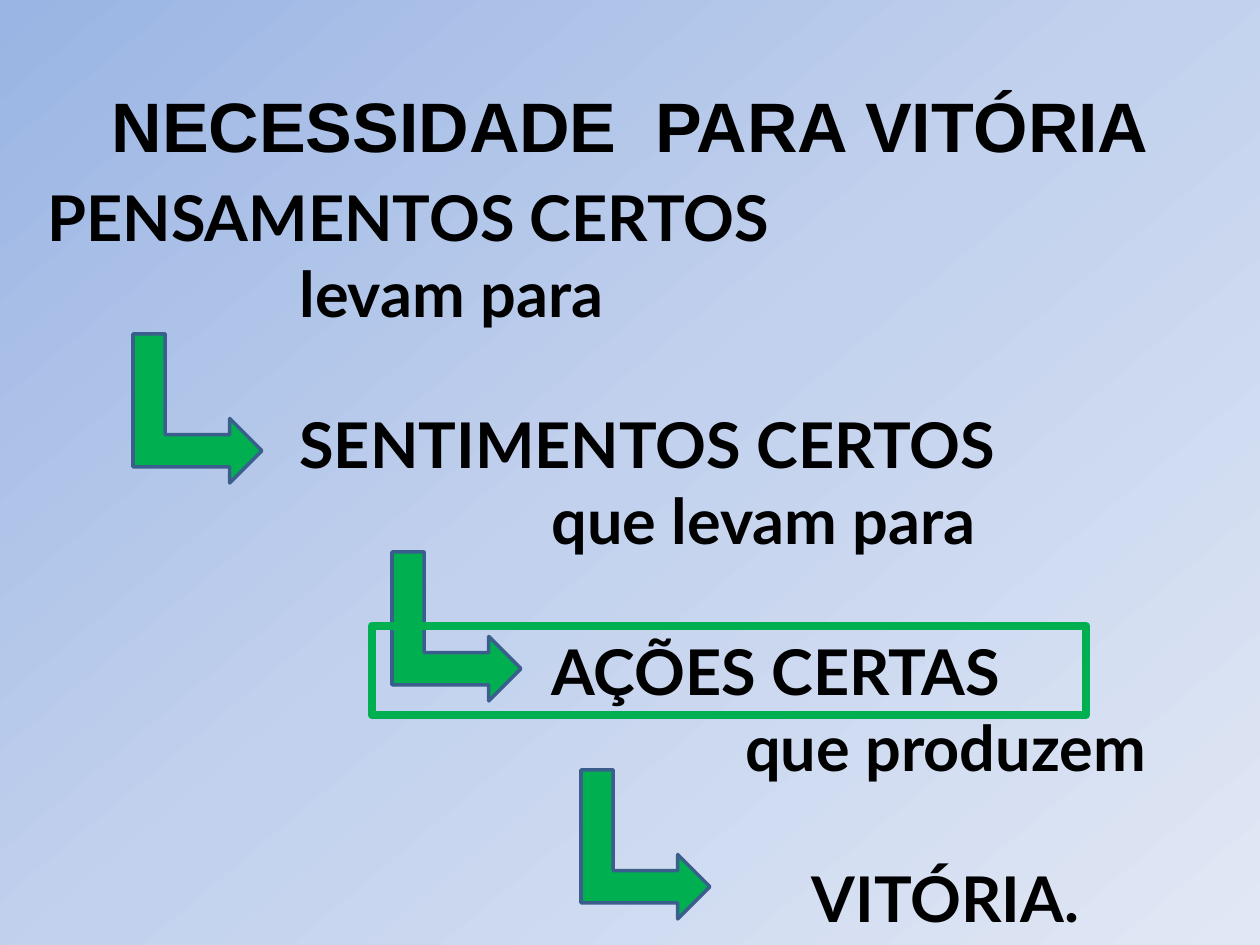
from copy import deepcopy
from dataclasses import dataclass
from typing import Any

from lxml.etree import SubElement
from pptx import Presentation
from pptx.dml.color import RGBColor as Rgb
from pptx.enum.shapes import MSO_SHAPE as Shape
from pptx.enum.text import PP_ALIGN as Align
from pptx.oxml.ns import qn
from pptx.util import Emu, Pt

PX = 914400 // 126
TAB = 126
COLORS = {
    "text": "000000",
    "green": "00B050",
    "edge": "3A5F8C",
    "sky": "9AB5E4",
    "mist": "C2D1ED",
    "pale": "E1E8F5",
}
TITLE = {"name": "Arial", "size": Pt(40), "bold": True}
STEP = {"name": "Lato", "size": Pt(36), "bold": True}
STEPS = [
    ("PENSAMENTOS CERTOS", 0, Align.LEFT),
    ("levam para", 2, Align.LEFT),
    ("SENTIMENTOS CERTOS", 2, Align.LEFT),
    ("que levam para", 4, Align.LEFT),
    ("AÇÕES CERTAS", 4, Align.LEFT),
    ("que produzem", 5, Align.CENTER),
    ("VITÓRIA.", 5, Align.CENTER),
]
ARROWS = [(123, 344), (571, 780), (382, 562)]


def color(name):
    return Rgb.from_string(COLORS[name])


def px(*lengths):
    return [Emu(length * PX) for length in lengths]


@dataclass
class Painter:
    """Draws styled elements on the current slide."""

    page: Any

    def background(self, stops, angle):
        fill = self.page.background.fill
        fill.gradient()
        fill.gradient_angle = angle
        stop_list = next(self.page.element.iter(qn("a:gsLst")))
        stop_list.append(deepcopy(stop_list[-1]))
        for stop, (position, name) in zip(fill.gradient_stops, stops):
            stop.position = position
            stop.color.rgb = color(name)

    def text(self, at, lines, style, top=6, gap=0):
        frame = self.page.shapes.add_textbox(*px(*at)).text_frame
        frame.word_wrap = True
        frame.margin_top = Emu(top * PX)
        for index, (words, tabs, align) in enumerate(lines):
            para = frame.paragraphs[0] if index == 0 else frame.add_paragraph()
            para._p.get_or_add_pPr().set("marL", str(tabs * TAB * PX))
            para.alignment = align
            if index and index % 2 == 0:
                para.space_before = Pt(gap)
            span = para.add_run()
            span.text = words
            for key, value in style.items():
                setattr(span.font, key, value)
            span.font.color.rgb = color("text")

    def shape(self, kind, at, edge, width, fill=None, turn=0):
        item = self.page.shapes.add_shape(kind, *px(*at))
        item.shadow.inherit = False
        item.rotation = turn
        if fill:
            item.fill.solid()
            item.fill.fore_color.rgb = color(fill)
        else:
            item.fill.background()
        item.line.color.rgb = color(edge)
        item.line.width = Pt(width)
        SubElement(item.line._get_or_add_ln(), qn("a:round"))


def main():
    deck = Presentation()
    deck.slide_width, deck.slide_height = px(1260, 945)
    painter = Painter(deck.slides.add_slide(deck.slide_layouts[6]))
    painter.background([(0, "sky"), (0.5, "mist"), (1, "pale")], 310)
    painter.text((35, 173, 1191, 776), STEPS, STEP, gap=43.2)
    for left, top in ARROWS:
        painter.shape(Shape.BENT_UP_ARROW, (left, top, 149, 129), "edge", 2, "green", 90)
    title = [("NECESSIDADE  PARA VITÓRIA", 0, Align.CENTER)]
    painter.text((35, 68, 1191, 127), title, TITLE, top=15)
    painter.shape(Shape.RECTANGLE, (372, 626, 714, 89), "green", 5)
    deck.save("out.pptx")


if __name__ == "__main__":
    main()
